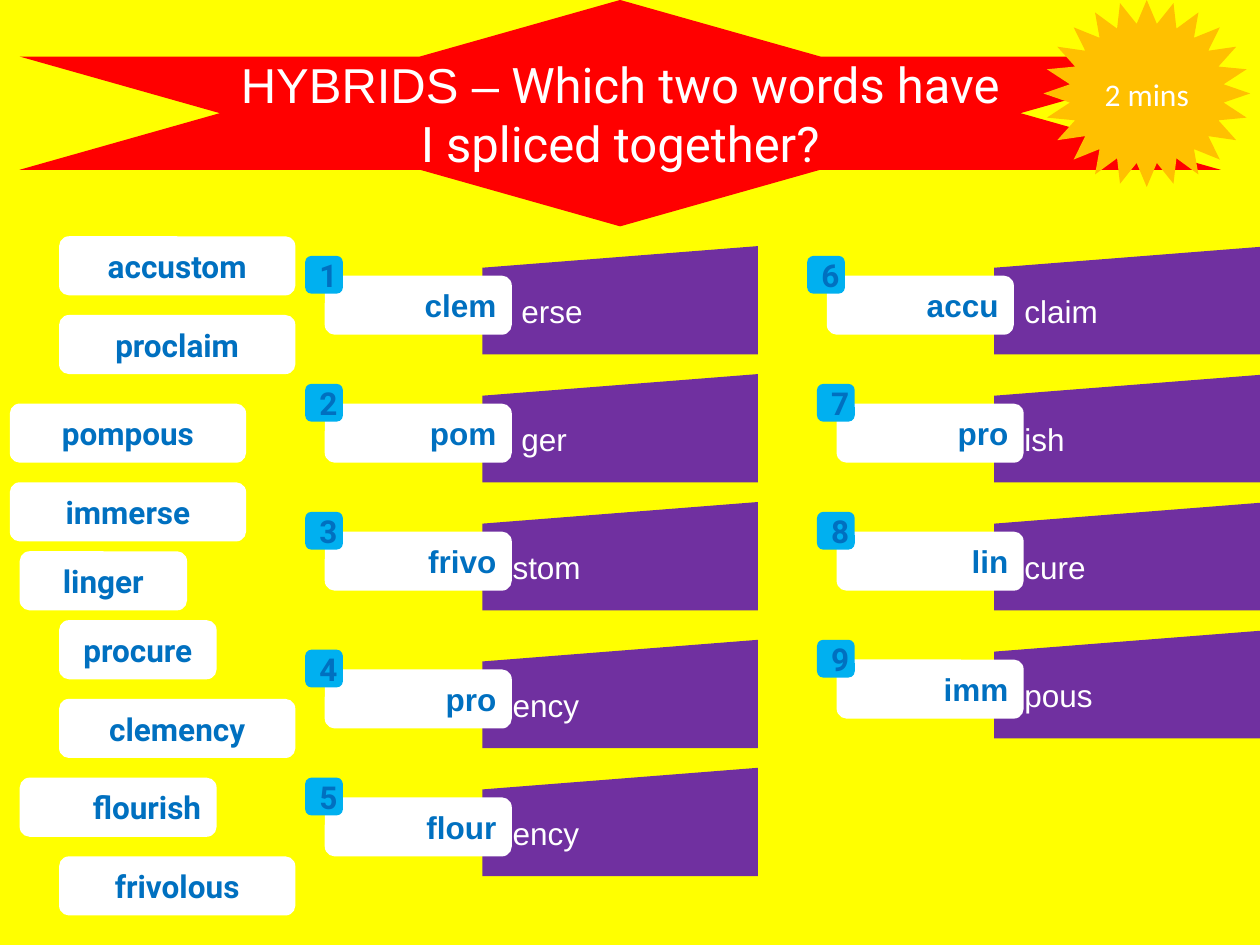
from dataclasses import dataclass

import pptx
import pptx.util
import pptx.dml.color
import pptx.enum.shapes
import pptx.enum.text

RGBColor = pptx.dml.color.RGBColor
KIND = pptx.enum.shapes.MSO_SHAPE
ALIGN = pptx.enum.text.PP_ALIGN
MIDDLE = pptx.enum.text.MSO_ANCHOR.MIDDLE
Inches = pptx.util.Inches

YELLOW = RGBColor(0xFF, 0xFF, 0x00)
RED = RGBColor(0xFF, 0x00, 0x00)
GOLD = RGBColor(0xFF, 0xC0, 0x00)
WHITE = RGBColor(0xFF, 0xFF, 0xFF)
BLUE = RGBColor(0x00, 0x70, 0xC0)
SKY = RGBColor(0x00, 0xB0, 0xF0)
PURPLE = RGBColor(0x70, 0x30, 0xA0)

WIDTH, HEIGHT = 10, 7.5
COLS, ROWS = 128, 96
TILE = 6
BADGE = 3.84


@dataclass
class Word:
    text: str
    col: float
    row: float
    wide: float = 24
    align: ALIGN = ALIGN.CENTER


@dataclass
class Splice:
    head: str
    tail: str
    col: float
    row: float
    slab: float
    inset: float = 0.24


WORDS = [
    Word("accustom", 6, 24),
    Word("proclaim", 6, 32),
    Word("pompous", 1, 41),
    Word("immerse", 1, 49),
    Word("linger", 2, 56, 17),
    Word("procure", 6, 63, 16),
    Word("clemency", 6, 71),
    Word("flourish", 2, 79, 20, ALIGN.RIGHT),
    Word("frivolous", 6, 87),
]
LEFT, RIGHT = 49, 101
SPLICES = [
    Splice("clem", "erse", 33, 25, LEFT, 0.31),
    Splice("pom", "ger", 33, 38, LEFT, 0.31),
    Splice("frivo", "stom", 33, 51, LEFT),
    Splice("pro", "ency", 33, 65, LEFT),
    Splice("flour", "ency", 33, 78, LEFT),
    Splice("accu", "claim", 84, 25, RIGHT),
    Splice("pro", "ish", 85, 38, RIGHT),
    Splice("lin", "cure", 85, 51, RIGHT),
    Splice("imm", "pous", 85, 64, RIGHT),
]


def place(shape, col: float, row: float, wide: float, high: float) -> None:
    shape.left, shape.width = (Inches(WIDTH * n / COLS) for n in (col, wide))
    shape.top, shape.height = (Inches(HEIGHT * n / ROWS) for n in (row, high))


def draw(slide, kind, col: float, row: float, wide: float, high: float, fill):
    shape = slide.shapes.add_shape(kind, 0, 0, 0, 0)
    place(shape, col, row, wide, high)
    shape.shadow.inherit = False
    shape.fill.solid()
    shape.fill.fore_color.rgb = fill
    shape.line.fill.background()
    return shape


def write(shape, text: str, *, font="Roboto", size=18, color=BLUE,
          bold=False, align=ALIGN.CENTER) -> None:
    frame = shape.text_frame
    frame.vertical_anchor = MIDDLE
    frame.word_wrap = True
    line = frame.paragraphs[0]
    line.alignment = align
    run = line.add_run()
    run.text = text
    run.font.name = font
    run.font.size = pptx.util.Pt(size)
    run.font.color.rgb = color
    run.font.bold = bold


def draw_title(slide) -> None:
    title = slide.shapes.title
    star = draw(slide, KIND.STAR_6_POINT, 2, 0, 122, 23, RED)
    title.element.addprevious(star.element)
    place(title, 22.5, 5.75, 81, 11.5)
    write(title, "HYBRIDS –", font="Arial", size=28, color=WHITE)
    write(title, " Which two words have I spliced together?", size=28, color=WHITE)


def draw_word(slide, word: Word) -> None:
    tile = draw(slide, KIND.ROUNDED_RECTANGLE, word.col, word.row, word.wide, TILE, WHITE)
    write(tile, word.text, bold=True, align=word.align)


def draw_splice(slide, num: int, item: Splice) -> None:
    slab = draw(slide, KIND.FLOWCHART_MANUAL_INPUT, item.slab, item.row, 28, 11, PURPLE)
    slab.text_frame.margin_left = Inches(item.inset)
    write(slab, item.tail, font="Arial", color=WHITE, align=ALIGN.LEFT)
    tile = draw(slide, KIND.ROUNDED_RECTANGLE, item.col, item.row + 3, 19, TILE, WHITE)
    write(tile, item.head, font="Arial", bold=True, align=ALIGN.RIGHT)
    badge = draw(slide, KIND.ROUNDED_RECTANGLE, item.col - 2, item.row + 1, BADGE, BADGE, SKY)
    write(badge, str(num), bold=True)


def main() -> None:
    deck = pptx.Presentation()
    deck.slide_width, deck.slide_height = Inches(WIDTH), Inches(HEIGHT)
    slide = deck.slides.add_slide(deck.slide_layouts[5])
    slide.background.fill.solid()
    slide.background.fill.fore_color.rgb = YELLOW
    draw_title(slide)
    for word in WORDS:
        draw_word(slide, word)
    burst = draw(slide, KIND.STAR_24_POINT, 106, 0, 21, 19, GOLD)
    write(burst, "2 mins", font="Calibri", color=WHITE)
    for num, item in enumerate(SPLICES, 1):
        draw_splice(slide, num, item)
    deck.save("out.pptx")


if __name__ == "__main__":
    main()
